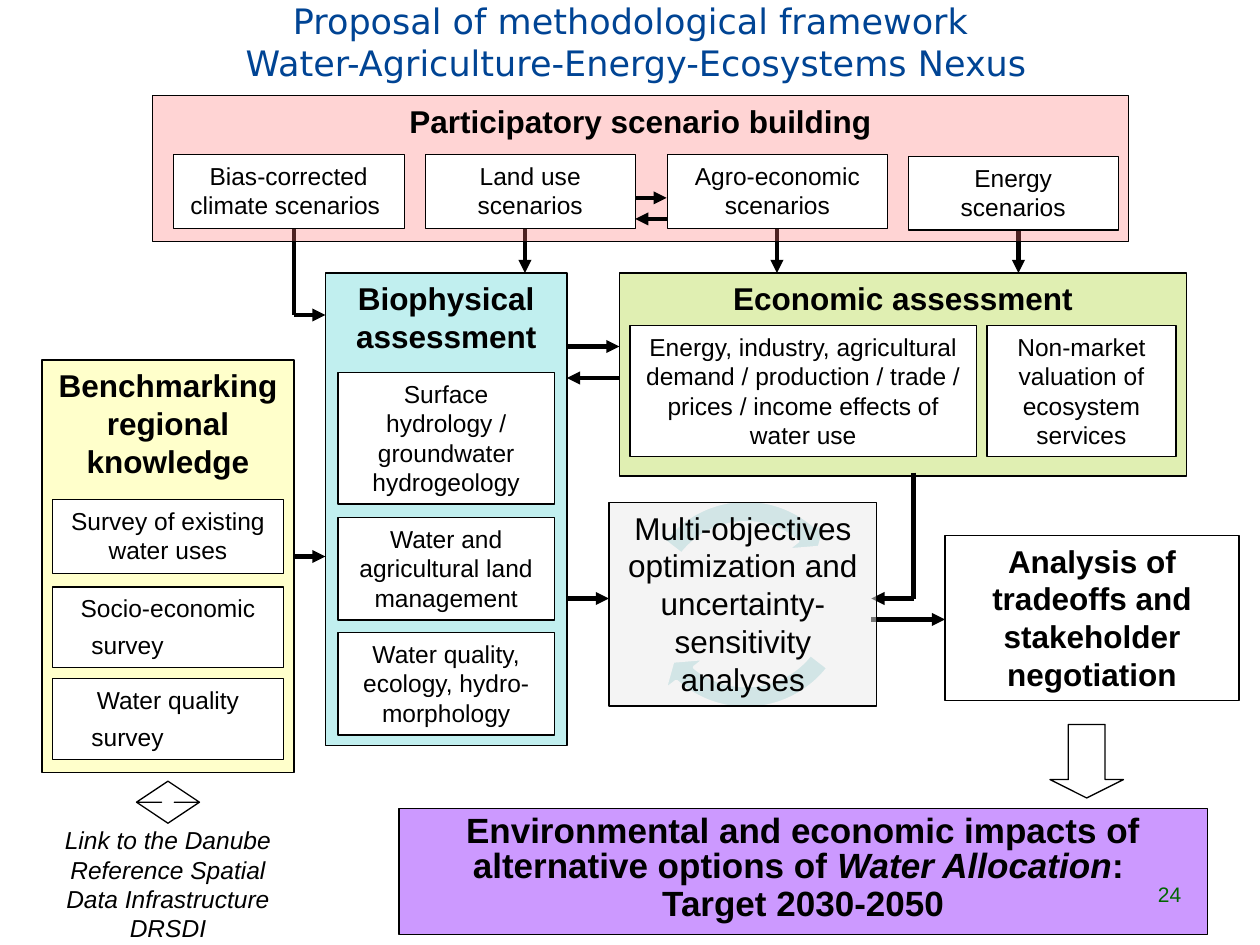
from typing import NamedTuple

from lxml.etree import SubElement
from pptx import Presentation
from pptx.dml.color import RGBColor
from pptx.enum.shapes import MSO_CONNECTOR as Connector, MSO_SHAPE as Preset
from pptx.enum.text import MSO_ANCHOR as Anchor, PP_ALIGN as Align
from pptx.oxml.ns import qn
from pptx.util import Inches, Pt

COLUMNS, ROWS = 120, 90
CELL = Inches(10) / COLUMNS


class Box(NamedTuple):
    """A rectangle measured in grid columns and rows."""
    left: float
    top: float
    width: float
    height: float

    def inner(self, left, top, width, height):
        """Return a box placed relative to this one."""
        return Box(self.left + left, self.top + top, width, height)


def cells(*lengths):
    """Convert grid lengths to slide units."""
    return [round(length * CELL) for length in lengths]


def color(value):
    """Turn a hex string into a colour."""
    return RGBColor.from_string(value)


def format_text(shape, size, bold=None, italic=None, hue="000000", font="Arial", align=Align.CENTER):
    """Format all text of a shape, top aligned and wrapped."""
    frame = shape.text_frame
    frame.word_wrap = True
    frame.vertical_anchor = Anchor.TOP
    for paragraph in frame.paragraphs:
        paragraph.alignment = align
        for run in paragraph.runs:
            run.font.size = Pt(size)
            run.font.name = font
            run.font.color.rgb = color(hue)
            if bold is not None:
                run.font.bold = bold
            if italic is not None:
                run.font.italic = italic


def add_block(slide, box, fill=None, opacity=100, preset=Preset.RECTANGLE, line="000000", width=0.75):
    """Draw an outlined preset shape."""
    shape = slide.shapes.add_shape(preset, *cells(*box))
    shape.shadow.inherit = False
    shape.line.color.rgb = color(line)
    shape.line.width = Pt(width)
    if fill is None:
        shape.fill.background()
        return shape
    shape.fill.solid()
    shape.fill.fore_color.rgb = color(fill)
    if opacity < 100:
        tint = shape.fill._xPr.find(qn("a:solidFill"))[0]
        SubElement(tint, qn("a:alpha"), val=str(opacity * 1000))
    return shape


def add_panel(slide, box, title, fill=None, opacity=100, bold=True):
    """Draw a region background with its heading."""
    panel = add_block(slide, box, fill, opacity)
    panel.text_frame.text = title
    format_text(panel, 18, bold=bold)


def add_card(slide, box, text):
    """Draw a white card with a short label."""
    card = add_block(slide, box, "FFFFFF")
    card.text_frame.text = text
    format_text(card, 14)
    return card


def add_label(slide, box, text, size, **style):
    """Write text without a frame."""
    label = slide.shapes.add_textbox(*cells(*box))
    label.text_frame.text = text
    format_text(label, size, **style)
    return label


def add_arrow(slide, *points):
    """Draw straight segments through the points, with a head at the last."""
    for start, end in zip(points, points[1:]):
        segment = slide.shapes.add_connector(Connector.STRAIGHT, *cells(*start, *end))
        segment.line.color.rgb = color("000000")
        segment.line.width = Pt(2.5)
        SubElement(segment._element.spPr, qn("a:effectLst"))
    SubElement(segment.line._get_or_add_ln(), qn("a:tailEnd"), type="triangle")


def add_title(slide, box):
    """Write the two title lines."""
    title = add_label(slide, box, "Proposal of methodological framework \n"
                      "Water-Agriculture-Energy-Ecosystems Nexus", 20, hue="004494", font="DejaVu Sans")
    frame = title.text_frame
    frame.margin_left = frame.margin_right = frame.margin_top = frame.margin_bottom = 0


def add_scenarios(slide, box):
    """Draw the scenario region, its cards and the exchange between two of them."""
    add_panel(slide, box, "Participatory scenario building", "FF7171", 30)
    exchange = box.inner(46, 9.75, 3, 2)
    right, bottom = exchange.left + exchange.width, exchange.top + exchange.height
    add_arrow(slide, (exchange.left, exchange.top), (right, exchange.top))
    add_arrow(slide, (right, bottom), (exchange.left, bottom))
    for left, top, width, text in (
        (2, 5.65, 22, "Bias-corrected climate scenarios "),
        (26, 5.65, 20, "Land use scenarios"),
        (49.1, 5.65, 20.9, "Agro-economic scenarios"),
        (72, 5.8, 20, "Energy scenarios"),
    ):
        add_card(slide, box.inner(left, top, width, 7), text)


def add_biophysical(slide, box):
    """Draw the biophysical region and its stacked cards."""
    add_panel(slide, box, "Biophysical assessment", "33CCCC", 30)
    for top, height, text in (
        (9.5, 12.5, "Surface hydrology / groundwater hydrogeology"),
        (23.3, 9.75, "Water and agricultural land management"),
        (34.25, 9.75, "Water quality, ecology, hydro-morphology"),
    ):
        add_card(slide, box.inner(1.2, top, box.width - 2.4, height), text)


def add_benchmarking(slide, box):
    """Draw the regional knowledge region and its surveys."""
    add_panel(slide, box, "Benchmarking regional knowledge", "FFFF99", 50)
    width = box.width - 2
    add_card(slide, box.inner(1, 13.3, width, 7), "Survey of existing water uses")
    for top, topic in ((21.6, "Socio-economic"), (30.35, "Water quality")):
        card = add_card(slide, box.inner(1, top, width, 7.7), f"{topic}\nsurvey")
        last = card.text_frame.paragraphs[1]
        last._p.get_or_add_pPr().set("marL", str(Inches(0.21)))
        last.alignment = Align.LEFT
        last.space_before = Pt(4.5)


def add_economic(slide, box):
    """Draw the economic region and its two cards."""
    add_panel(slide, box, "Economic assessment", "99CC00", 30)
    add_card(slide, box.inner(1, 5, 33, 12.5), "Energy, industry, agricultural demand / production / "
             "trade / prices / income effects of water use")
    add_card(slide, box.inner(35, 5, 18, 12.5), "Non-market valuation of ecosystem services")


def add_optimization(slide, box):
    """Draw the optimization region over a cycle of two arrows."""
    for end, start in ((78.507, 22.643), (186.507, 130.643)):
        cycle = add_block(slide, box.inner(1.7, -1.65, 22.7, 22.7), "BBE0E3",
                          preset=Preset.CIRCULAR_ARROW, line="FFFFFF", width=2)
        for index, value in enumerate((0.095, 6.85, end, start, 0.111)):
            cycle.adjustments[index] = value
    add_panel(slide, box, "Multi-objectives optimization and uncertainty-sensitivity analyses",
              "EAEAEA", 50, bold=False)


def add_impacts(slide, box):
    """Draw the impact statement and the page number."""
    shape = add_block(slide, box, "CC99FF")
    shape.text_frame.text = "Environmental and economic impacts of alternative options of \nTarget 2030-2050"
    statement, target = shape.text_frame.paragraphs
    statement.add_run().text = "Water Allocation"
    statement.add_run().text = ": "
    format_text(shape, 20, bold=True)
    statement.runs[1].font.italic = True
    statement.line_spacing = target.line_spacing = 0.85
    target.space_before = Pt(1)
    add_label(slide, box.inner(71.1, 6.4, 4.9, 4.1), "24", 12, hue="006600", align=Align.LEFT)


def add_data_link(slide, box):
    """Draw the two-way arrow and the data link note below it."""
    arrow = add_block(slide, box.inner(9, 0, 6, 4), preset=Preset.UP_DOWN_ARROW)
    arrow.adjustments[0], arrow.adjustments[1] = 0.5, 0.2
    add_label(slide, box.inner(0, 3.6, box.width, box.height - 3.6),
              "Link to the Danube Reference Spatial Data Infrastructure DRSDI", 14, italic=True)


def main():
    """Build and save the framework slide."""
    presentation = Presentation()
    presentation.slide_width, presentation.slide_height = cells(COLUMNS, ROWS)
    slide = presentation.slides.add_slide(presentation.slide_layouts[6])
    add_biophysical(slide, Box(31, 26, 23, 45))
    add_benchmarking(slide, Box(4, 34.3, 24, 39.25))
    add_economic(slide, Box(59, 26, 54, 19.35))
    for points in (
        ((28, 53), (31, 53)), ((54, 33), (59, 33)), ((59, 36), (54, 36)), ((54, 57), (58, 57)),
        ((87, 45), (87, 57), (83, 57)), ((83, 59), (90, 59)), ((28, 21), (28, 30), (31, 30)),
        ((50, 20.4), (50, 26)), ((74, 20.4), (74, 26)), ((97, 20.4), (97, 26)),
    ):
        add_arrow(slide, *points)
    add_scenarios(slide, Box(14.5, 9.1, 93, 13.9))
    add_title(slide, Box(1.2, 0, 118.8, 8))
    add_optimization(slide, Box(58, 47.85, 25.5, 19.4))
    add_panel(slide, Box(90, 51, 28, 15.75), "Analysis of tradeoffs and stakeholder negotiation")
    add_block(slide, Box(100, 69, 7, 7), preset=Preset.DOWN_ARROW).adjustments[1] = 0.25
    add_impacts(slide, Box(38, 77, 77, 12))
    add_data_link(slide, Box(4, 74.4, 24, 16))
    presentation.save("out.pptx")


if __name__ == "__main__":
    main()
